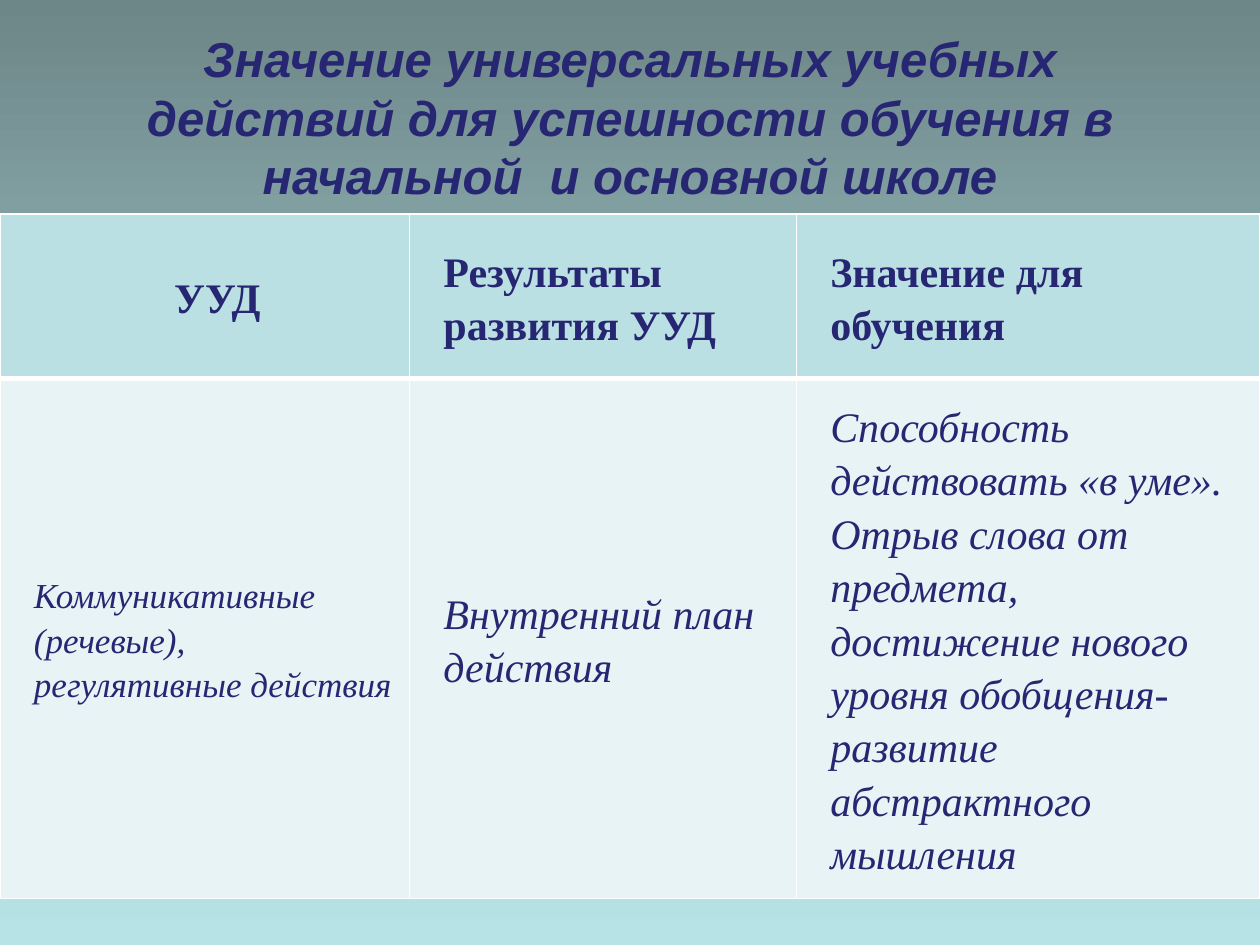
from copy import deepcopy
from dataclasses import dataclass

from lxml import etree
from pptx import Presentation, util as u
from pptx.dml.color import RGBColor
from pptx.enum import text
from pptx.oxml.ns import qn


@dataclass(frozen=True)
class Theme:
    """Colours, fonts and type sizes of the slide."""
    ink: str = "262673"
    head_fill: str = "BBE0E3"
    body_fill: str = "E7F3F4"
    rule: str = "FFFFFF"
    backdrop: tuple = ("6D8688", "9BBFC2", "B8E3E6")
    title_font: str = "Arial"
    table_font: str = "Times New Roman"
    title_size: int = 28
    cell_size: int = 24
    small_size: int = 20


T = Theme()
TITLE = "Значение универсальных учебных действий для успешности обучения в начальной  и основной школе"
HEADER = ["УУД", "Результаты развития УУД", "Значение для обучения"]
BODY = [
    "Коммуникативные (речевые), регулятивные действия",
    "Внутренний план действия",
    "Способность действовать «в уме».\n"
    "Отрыв слова от предмета, достижение нового уровня обобщения- развитие абстрактного мышления",
]


def style(p, name, size, bold, italic):
    """Set the font of a paragraph in the ink colour."""
    f = p.font
    f.name, f.size, f.bold, f.italic = name, u.Pt(size), bold, italic
    f.color.rgb = RGBColor.from_string(T.ink)


def paint_background(s):
    """Fill the slide with an evenly stepped vertical gradient."""
    fill = s.background.fill
    fill.gradient()
    fill.gradient_angle = 270
    stops = next(s._element.iter(qn("a:gsLst")))
    stops.insert(1, deepcopy(stops[0]))
    for i, (stop, color) in enumerate(zip(fill.gradient_stops, T.backdrop)):
        stop.position = i / (len(T.backdrop) - 1)
        stop.color.rgb = RGBColor.from_string(color)


def add_title(s, box):
    """Place the heading in the title placeholder."""
    sp = s.shapes.title
    sp.left, sp.top, sp.width, sp.height = box
    tf = sp.text_frame
    tf.text = TITLE
    tf.word_wrap = True
    tf.auto_size = text.MSO_AUTO_SIZE.NONE
    tf.vertical_anchor = text.MSO_ANCHOR.MIDDLE
    p = tf.paragraphs[0]
    p.alignment = text.PP_ALIGN.CENTER
    style(p, T.title_font, T.title_size, True, True)


def set_borders(cell, **widths):
    """Draw solid cell borders of the given widths in points."""
    pr = cell._tc.get_or_add_tcPr()
    for i, (side, width) in enumerate(widths.items()):
        ln = etree.Element(qn(f"a:ln{side}"), w=str(u.Pt(width)))
        fill = etree.SubElement(ln, qn("a:solidFill"))
        etree.SubElement(fill, qn("a:srgbClr"), val=T.rule)
        pr.insert(i, ln)


def fill_cell(cell, words, size, is_head):
    """Write and format one table cell."""
    cell.text = words
    cell.margin_left = cell.margin_right = u.Inches(0.07)
    cell.margin_top = cell.margin_bottom = 0
    cell.vertical_anchor = text.MSO_ANCHOR.MIDDLE
    cell.fill.solid()
    cell.fill.fore_color.rgb = RGBColor.from_string(T.head_fill if is_head else T.body_fill)
    for p in cell.text_frame.paragraphs:
        p.line_spacing = 1.15
        p._p.get_or_add_pPr().set("marL", str(u.Inches(0.2)))
        style(p, T.table_font, size, is_head, not is_head)
    set_borders(cell, L=1, R=1, T=1 if is_head else 3, B=3 if is_head else 1)


def add_results_table(s, box):
    """Build the table of actions, results and their value."""
    tbl = s.shapes.add_table(2, len(HEADER), *box).table
    for col, share in zip(tbl.columns, (0.325, 0.307, 0.368)):
        col.width = int(box[2] * share)
    for row, share in zip(tbl.rows, (0.24, 0.76)):
        row.height = int(box[3] * share)
    for i, words in enumerate(HEADER):
        fill_cell(tbl.cell(0, i), words, T.cell_size, True)
    for i, words in enumerate(BODY):
        fill_cell(tbl.cell(1, i), words, T.cell_size if i else T.small_size, False)
    tbl.cell(0, 0).text_frame.paragraphs[0].alignment = text.PP_ALIGN.CENTER


def main():
    """Build and save the presentation."""
    prs = Presentation()
    prs.slide_width, prs.slide_height = u.Inches(10), u.Inches(7.5)
    s = prs.slides.add_slide(prs.slide_layouts[5])
    paint_background(s)
    add_title(s, [u.Inches(v) for v in (0.5, 0.3, 9, 1.25)])
    add_results_table(s, [u.Inches(v) for v in (0, 1.7, 10, 5.43)])
    prs.save("out.pptx")


if __name__ == "__main__":
    main()
